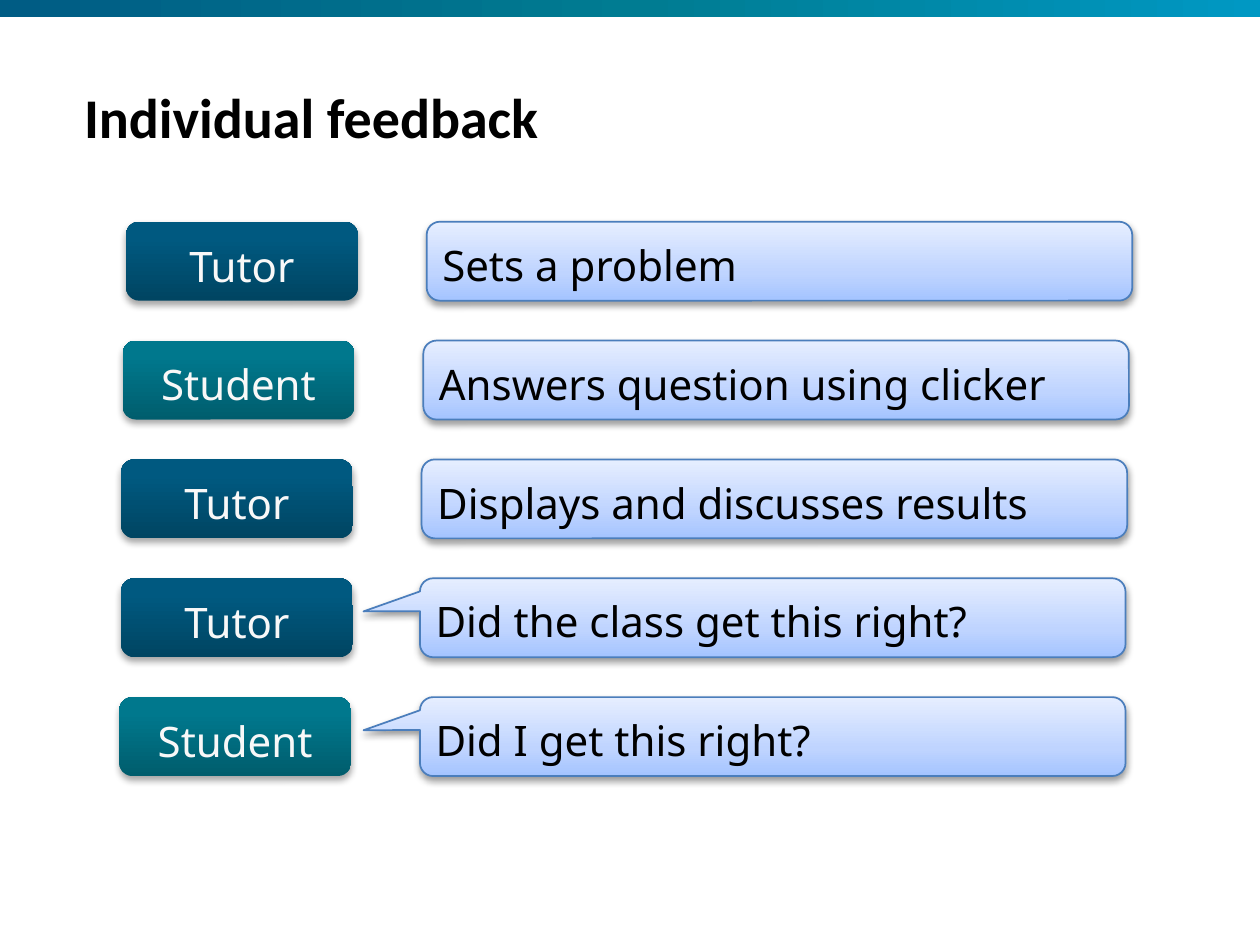
from copy import deepcopy

from lxml.etree import SubElement
from pptx import Presentation
from pptx.dml.color import RGBColor
from pptx.enum.shapes import MSO_SHAPE as SHAPE
from pptx.enum.text import MSO_ANCHOR as ANCHOR, PP_ALIGN as ALIGN
from pptx.oxml.ns import qn
from pptx.util import Inches, Pt

BAR = [(0, "005C84"), (0.51, "007C92"), (1, "0098C3")]
ROLE_FILLS = {
    "Tutor": [(0, "004562"), (0.8, "005980"), (1, "005A80")],
    "Student": [(0, "005D6D"), (0.8, "00788D"), (1, "00798E")],
}
ACTION_FILL = [(0, "A4C4FF"), (0.35, "BFD4FF"), (1, "E6EEFF")]
STEPS = [
    ("Tutor", 0.75, "Sets a problem", 2.54, False),
    ("Student", 0.73, "Answers question using clicker", 2.52, False),
    ("Tutor", 0.72, "Displays and discusses results", 2.51, False),
    ("Tutor", 0.72, "Did the class get this right?", 2.5, True),
    ("Student", 0.71, "Did I get this right?", 2.5, True),
]
FIRST_TOP, LAST_TOP, ROW_HEIGHT = 1.32, 4.15, 0.47
ROW_STEP = (LAST_TOP - FIRST_TOP) / (len(STEPS) - 1)


def add_panel(kind, left, top, width, height, stops, angle=90, line=None, shadow=None):
    shape = slide.shapes.add_shape(
        kind, Inches(left), Inches(top), Inches(width), Inches(height))
    shape.shadow.inherit = False
    shape.fill.gradient()
    shape.fill.gradient_angle = angle
    stop_list = shape._element.spPr.find(qn("a:gradFill")).find(qn("a:gsLst"))
    stop_list.append(deepcopy(stop_list[0]))
    for stop, (position, color) in zip(shape.fill.gradient_stops, stops):
        stop.position = position
        stop.color.rgb = RGBColor.from_string(color)
    if line:
        shape.line.color.rgb = RGBColor.from_string(line)
        shape.line.width = Pt(0.75)
    else:
        shape.line.fill.background()
    if shadow:
        opacity, distance = shadow
        effects = shape._element.spPr.find(qn("a:effectLst"))
        outer = SubElement(effects, qn("a:outerShdw"), blurRad=str(Pt(3.1)),
                           dist=str(Pt(distance)), dir="5400000", rotWithShape="0")
        black = SubElement(outer, qn("a:srgbClr"), val="000000")
        SubElement(black, qn("a:alpha"), val=str(opacity * 1000))
    return shape


def write_text(shape, text, size=18, font="Noto Sans", color="000000", bold=False,
               align=ALIGN.LEFT, anchor=ANCHOR.MIDDLE, side=0, top=0):
    frame = shape.text_frame
    frame.word_wrap = True
    frame.vertical_anchor = anchor
    frame.margin_left = frame.margin_right = Inches(side)
    frame.margin_top, frame.margin_bottom = Inches(top), 0
    paragraph = frame.paragraphs[0]
    paragraph.alignment = align
    run = paragraph.add_run()
    run.text = text
    run.font.size, run.font.name, run.font.bold = Pt(size), font, bold
    run.font.color.rgb = RGBColor.from_string(color)


presentation = Presentation()
presentation.slide_width = Inches(7.5)
presentation.slide_height = Inches(7.5 * 3 / 4)
slide = presentation.slides.add_slide(presentation.slide_layouts[6])

add_panel(SHAPE.RECTANGLE, 0, 0, 7.5, 0.1, BAR, angle=0)

title = slide.shapes.add_textbox(Inches(0.5), Inches(0.49), Inches(5.55), Inches(0.79))
write_text(title, "Individual feedback", size=24, font="Calibri", bold=True,
           anchor=ANCHOR.TOP)

for row, (role, role_left, action, action_left, is_speech) in enumerate(STEPS):
    top = FIRST_TOP + row * ROW_STEP
    role_box = add_panel(SHAPE.ROUNDED_RECTANGLE, role_left, top, 1.38, ROW_HEIGHT,
                         ROLE_FILLS[role], shadow=(35, 1.8))
    write_text(role_box, role, color="F8F8F8", align=ALIGN.CENTER, side=0.1, top=0.05)

    kind = SHAPE.ROUNDED_RECTANGULAR_CALLOUT if is_speech else SHAPE.ROUNDED_RECTANGLE
    action_box = add_panel(kind, action_left, top, 4.2, ROW_HEIGHT, ACTION_FILL,
                           line="4B7EBC", shadow=(38, 1.6))
    if is_speech:
        action_box.adjustments[0] = -0.58
        action_box.adjustments[1] = -0.08
    write_text(action_box, action, side=0.07, top=0.04)

presentation.save("out.pptx")
